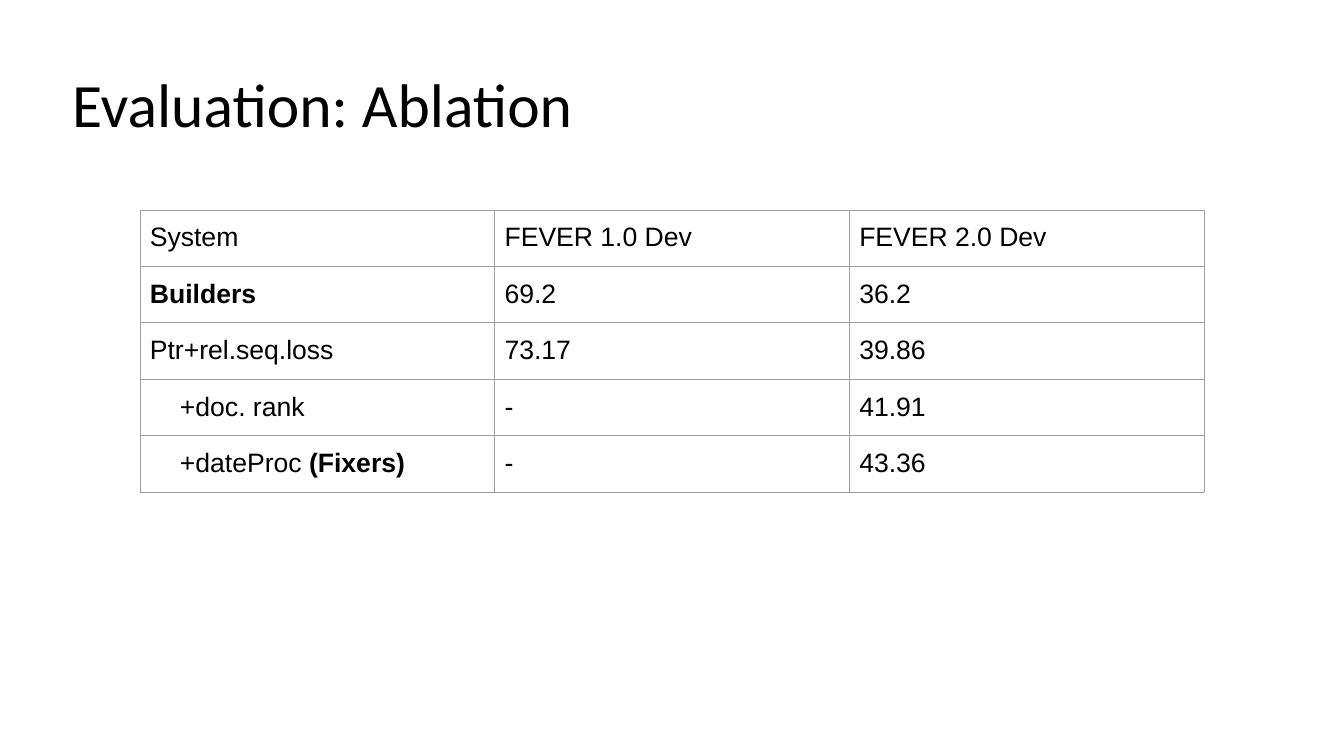
from lxml import etree
from pptx import Presentation
from pptx.dml.color import RGBColor
from pptx.enum.text import MSO_ANCHOR, MSO_AUTO_SIZE, PP_ALIGN
from pptx.oxml.ns import qn
from pptx.util import Pt

LEFT = PP_ALIGN.LEFT
MIDDLE = MSO_ANCHOR.MIDDLE
NO_FIT = MSO_AUTO_SIZE.NONE
TITLE_ONLY = 5
WIDTH, HEIGHT = 1344, 756
SCALE = 12192000 / WIDTH
COLORS = {"text": "000000", "rule": "9E9E9E"}
INDENT = 30
ROWS = [
    ("System", "FEVER 1.0 Dev", "FEVER 2.0 Dev"),
    ("Builders", "69.2", "36.2"),
    ("Ptr+rel.seq.loss", "73.17", "39.86"),
    ("+doc. rank", "-", "41.91"),
    ("+dateProc (Fixers)", "-", "43.36"),
]
BOLD = ("Builders", "(Fixers)")


def px(count):
    """Turn pixels into EMU."""
    return round(count * SCALE)


def style(font, name, size):
    """Set the face, size and colour of a font."""
    font.name, font.size = name, Pt(size)
    font.color.rgb = RGBColor.from_string(COLORS["text"])


def add_title(slide, box, text):
    """Place the slide title in the box."""
    title = slide.shapes.title
    title.left, title.top, title.width, title.height = map(px, box)
    frame = title.text_frame
    frame.text = text
    frame.auto_size = NO_FIT
    frame.vertical_anchor = MIDDLE
    para = frame.paragraphs[0]
    para.alignment, para.line_spacing = LEFT, 0.9
    style(para.font, "Calibri", 44)


def add_rules(cell):
    """Draw thin lines on all four sides of a cell."""
    props = cell._tc.get_or_add_tcPr()
    for side in ("lnL", "lnR", "lnT", "lnB"):
        line = etree.SubElement(props, qn(f"a:{side}"), w=str(Pt(0.75)))
        fill = etree.SubElement(line, qn("a:solidFill"))
        etree.SubElement(fill, qn("a:srgbClr"), val=COLORS["rule"])


def fill_cell(cell, text):
    """Write one cell, with its bold part and indent."""
    add_rules(cell)
    cell.fill.background()
    cell.margin_left = cell.margin_right = px(10)
    cell.margin_top = cell.margin_bottom = px(13)
    para = cell.text_frame.paragraphs[0]
    style(para.font, "Arial", 19)
    if text.startswith("+"):
        para._p.get_or_add_pPr().set("marL", str(px(INDENT)))
    tail = next((word for word in BOLD if text.endswith(word)), "")
    for part, bold in ((text.removesuffix(tail), False), (tail, True)):
        if part:
            run = para.add_run()
            run.text = part
            run.font.bold = bold


def add_scores(slide, box):
    """Place the table of scores in the box."""
    frame = slide.shapes.add_table(len(ROWS), len(ROWS[0]), *map(px, box))
    table = frame.table
    table.first_row = table.horz_banding = False
    for cells, texts in zip(table.rows, ROWS):
        for cell, text in zip(cells.cells, texts):
            fill_cell(cell, text)


def main():
    """Build and save the slide."""
    deck = Presentation()
    deck.slide_width, deck.slide_height = px(WIDTH), px(HEIGHT)
    slide = deck.slides.add_slide(deck.slide_layouts[TITLE_ONLY])
    add_title(slide, (62, 66, 1670, 84), "Evaluation: Ablation")
    add_scores(slide, (140, 210, 1064, 282))
    deck.save("out.pptx")


if __name__ == "__main__":
    main()
